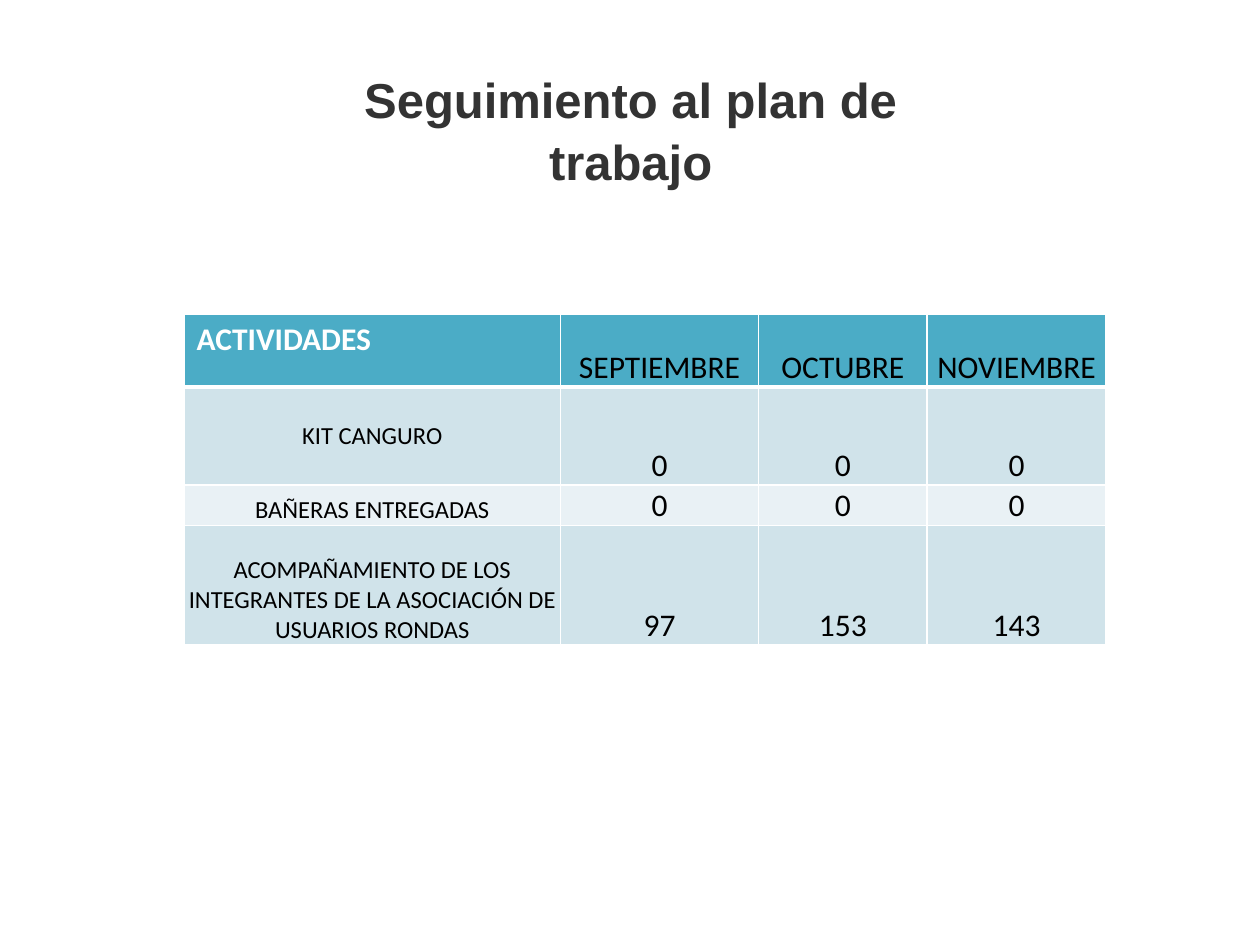
from pptx import Presentation
from pptx.dml.color import RGBColor
from pptx.enum.text import MSO_ANCHOR as Anchor, PP_ALIGN as Align
from pptx.oxml import parse_xml
from pptx.oxml.ns import nsdecls
from pptx.util import Inches, Pt

HEAD, BANDS = "4BACC6", ("D0E3EA", "E9F1F5")
COLS = (2.99, 1.57, 1.34, 1.42)
ROWS = (0.58, 0.78, 0.32, 0.95)
DATA = (
    ("ACTIVIDADES", "SEPTIEMBRE", "OCTUBRE", "NOVIEMBRE"),
    ("KIT CANGURO", "0", "0", "0"),
    ("BAÑERAS ENTREGADAS", "0", "0", "0"),
    ("ACOMPAÑAMIENTO DE LOS INTEGRANTES DE LA ASOCIACIÓN DE USUARIOS RONDAS",
     "97", "153", "143"),
)


def color(code):
    return RGBColor.from_string(code)


def style(para, face, size, code, bold=False, align=Align.CENTER):
    para.alignment = align
    for run in para.runs:
        font = run.font
        font.name, font.size, font.bold = face, Pt(size), bold
        font.color.rgb = color(code)


def edge(cell, side, width):
    cell._tc.get_or_add_tcPr().append(parse_xml(
        f'<a:ln{side} {nsdecls("a")} w="{Pt(width)}"><a:solidFill>'
        f'<a:srgbClr val="FFFFFF"/></a:solidFill></a:ln{side}>'))


def add_title(slide, box):
    title = slide.shapes.title
    title.left, title.top, title.width, title.height = map(Inches, box)
    frame = title.text_frame
    frame.text = "Seguimiento al plan de trabajo"
    frame.word_wrap = True
    frame.vertical_anchor = Anchor.TOP
    frame.margin_left = frame.margin_right = Inches(0.2)
    para = frame.paragraphs[0]
    para.line_spacing = 1.05
    style(para, "Arial", 28, "333333", bold=True)


def fill_cell(cell, row, col, text):
    # Borders, with a heavy rule under the header
    for side in "LRTB":
        heavy = (row, side) in ((0, "B"), (1, "T"))
        edge(cell, side, 3 if heavy else 1)
    cell.fill.solid()
    cell.fill.fore_color.rgb = color(BANDS[(row - 1) % 2] if row else HEAD)

    # Text
    cell.text = text
    para = cell.text_frame.paragraphs[0]
    if row == col == 0:
        style(para, "Calibri", 18, "FFFFFF", True, Align.LEFT)
        return
    style(para, "Calibri", 14 if col == 0 else 18, "000000")
    if (row, col) == (1, 0):
        cell.vertical_anchor = Anchor.MIDDLE
        return
    cell.vertical_anchor = Anchor.BOTTOM
    cell.margin_left = cell.margin_right = 0
    cell.margin_top = cell.margin_bottom = 0


def add_grid(slide, left, top):
    box = map(Inches, (left, top, sum(COLS), sum(ROWS)))
    grid = slide.shapes.add_table(len(ROWS), len(COLS), *box).table
    for part, size in zip(grid.columns, COLS):
        part.width = Inches(size)
    for part, size in zip(grid.rows, ROWS):
        part.height = Inches(size)
    for row, texts in enumerate(DATA):
        for col, text in enumerate(texts):
            fill_cell(grid.cell(row, col), row, col, text)


def main():
    deck = Presentation()
    deck.slide_width, deck.slide_height = Inches(10), Inches(7.5)
    slide = deck.slides.add_slide(deck.slide_layouts[5])
    add_title(slide, (2.09, 0.48, 5.83, 1.51))
    add_grid(slide, 1.46, 2.49)
    deck.save("out.pptx")


if __name__ == "__main__":
    main()
